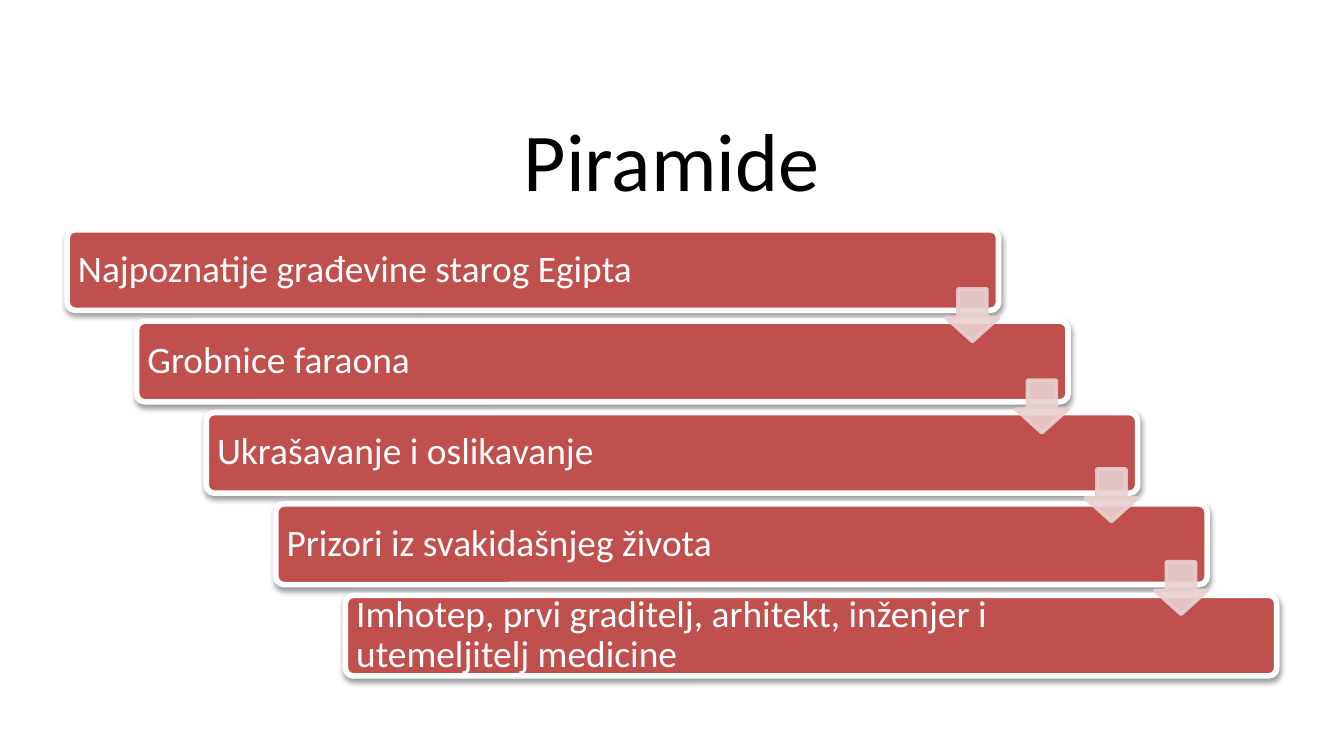
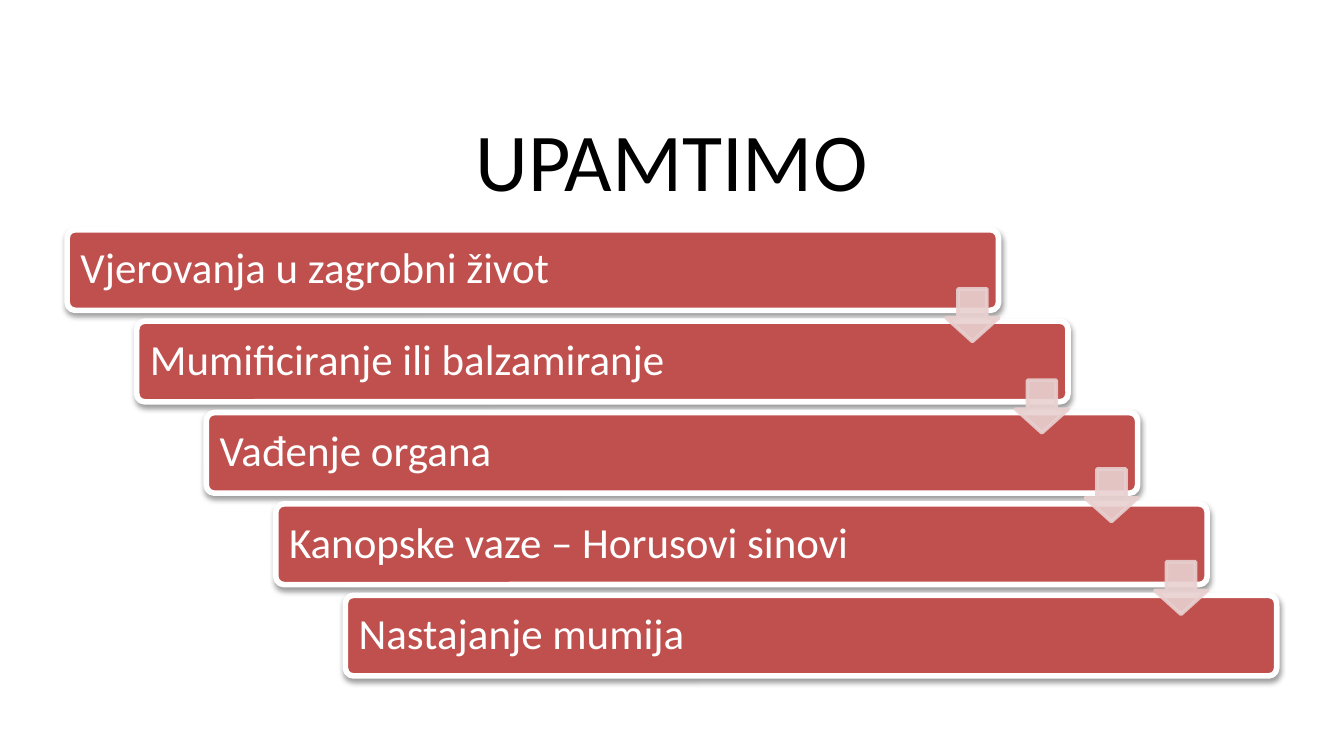
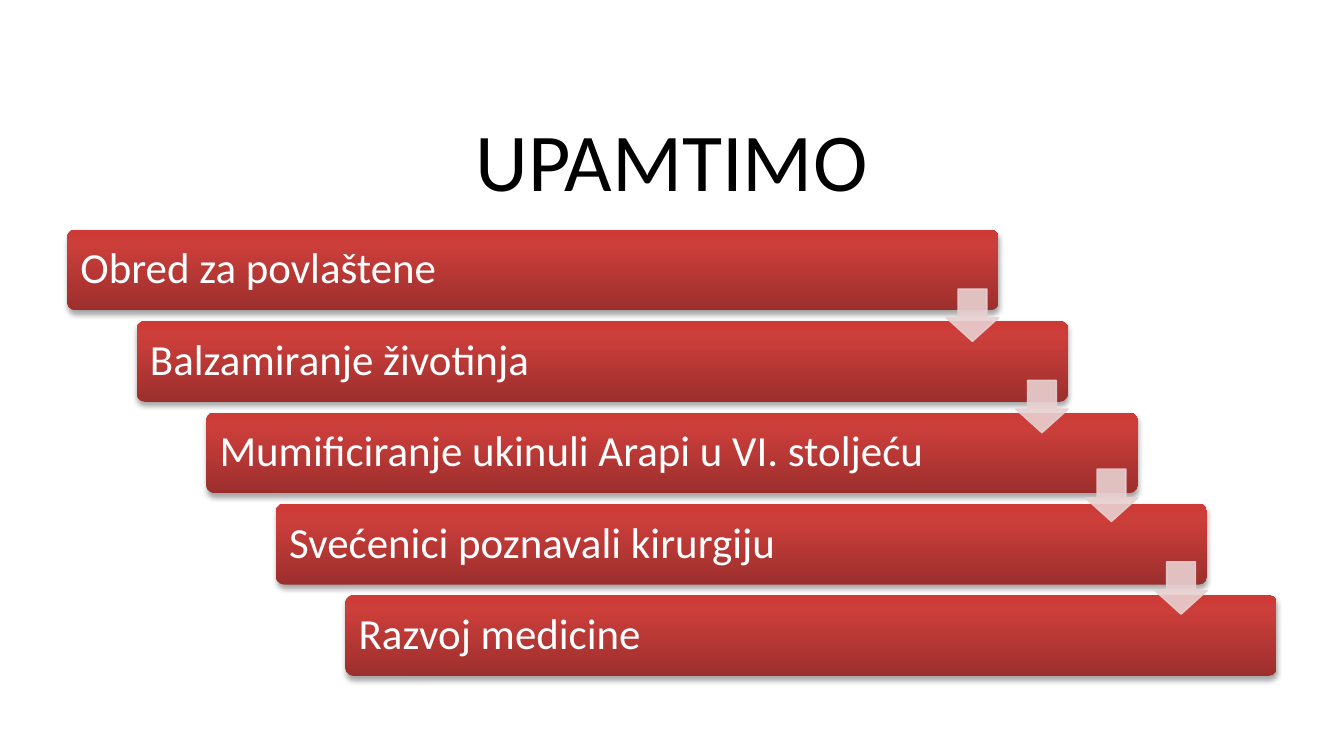
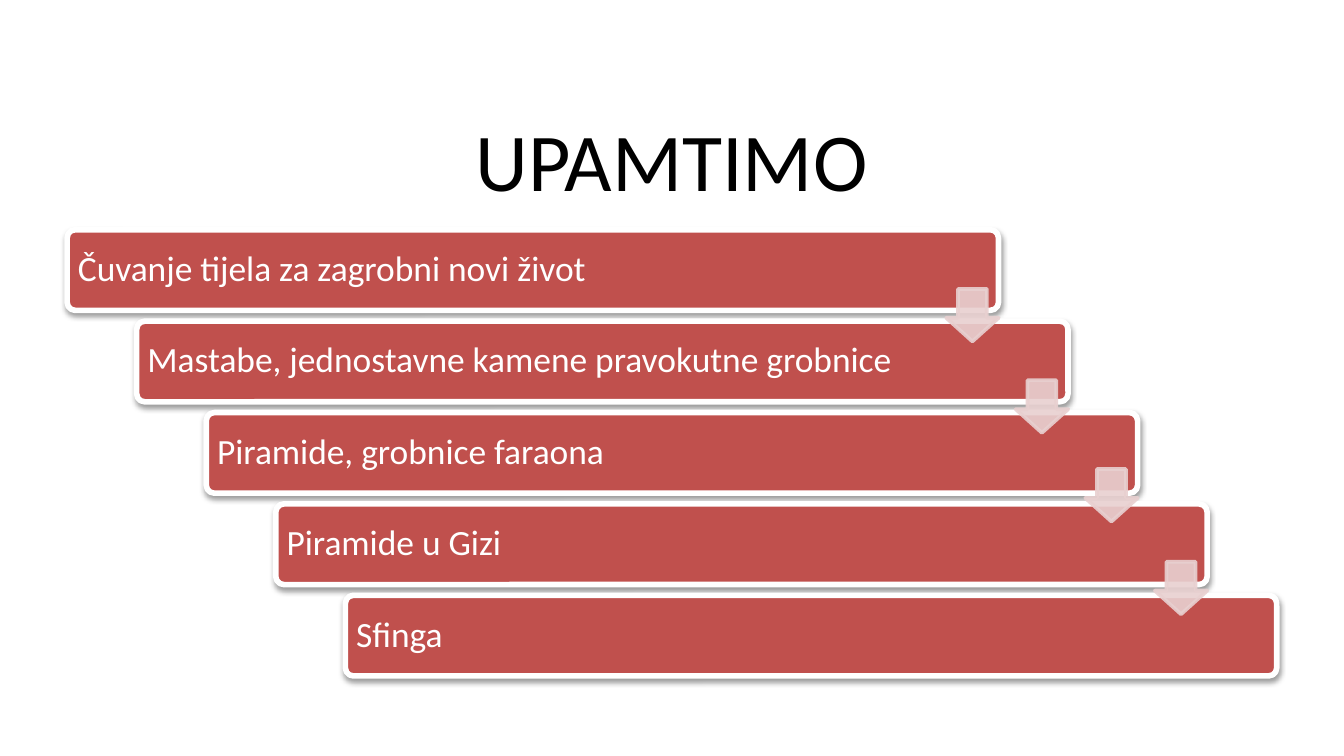
import copy

from lxml import etree
from pptx import Presentation
from pptx import util as u
from pptx.dml.color import RGBColor
from pptx.enum import shapes, text
from pptx.oxml import ns

COLORS = {
    "title": "000000",
    "bar": "C0504D",
    "bar_text": "FFFFFF",
    "bar_line": "FFFFFF",
    "arrow": "E8D0D0",
    "shadow": "000000",
}
GRADIENT = [(0, "9C2F2D"), (0.8, "CB3E3A"), (1, "CE3B37")]
FONT = "Calibri"

SLIDE_WIDTH = 10
SLIDE_HEIGHT = SLIDE_WIDTH * 9 / 16
BAR_WIDTH, BAR_HEIGHT = 6.93, 0.6
FIRST_BAR, LAST_BAR = (0.5, 1.71), (2.57, 4.43)
FIRST_TEXT_WIDTH, TEXT_WIDTH = 6.25, 6.02
ARROW_SIZE = 0.39
ARROW_TOPS = (2.15, 2.83, 3.49, 4.18)

FLAT = {"gradient": False, "arrow_line": 2, "shadow_alpha": 38, "shadow_distance": 1.6}
GLOSSY = {"gradient": True, "arrow_line": 0.75, "shadow_alpha": 35, "shadow_distance": 1.8}

SLIDES = [
    ("Piramide", FLAT, 20, 0.08, [
        "Najpoznatije građevine starog Egipta",
        "Grobnice faraona",
        "Ukrašavanje i oslikavanje",
        "Prizori iz svakidašnjeg života",
        "Imhotep, prvi graditelj, arhitekt, inženjer i utemeljitelj medicine",
    ]),
    ("UPAMTIMO", FLAT, 23, 0.1, [
        "Vjerovanja u zagrobni život",
        "Mumificiranje ili balzamiranje",
        "Vađenje organa",
        "Kanopske vaze – Horusovi sinovi",
        "Nastajanje mumija",
    ]),
    ("UPAMTIMO", GLOSSY, 23, 0.1, [
        "Obred za povlaštene",
        "Balzamiranje životinja",
        "Mumificiranje ukinuli Arapi u VI. stoljeću",
        "Svećenici poznavali kirurgiju",
        "Razvoj medicine",
    ]),
    ("UPAMTIMO", FLAT, 19, 0.08, [
        "Čuvanje tijela za zagrobni novi život",
        "Mastabe, jednostavne kamene pravokutne grobnice",
        "Piramide, grobnice faraona",
        "Piramide u Gizi",
        "Sfinga",
    ]),
]


def color(name):
    return RGBColor.from_string(COLORS[name])


def spread(first, last, count):
    return [
        tuple(start + (end - start) * index / (count - 1) for start, end in zip(first, last))
        for index in range(count)
    ]


def add_text(parent, box, words, size, color_name, inset=None, align=None):
    shape = parent.add_textbox(*map(u.Inches, box))
    frame = shape.text_frame
    frame.text = words
    frame.word_wrap = True
    frame.vertical_anchor = text.MSO_ANCHOR.MIDDLE
    if inset is not None:
        for side in ("left", "top", "right", "bottom"):
            setattr(frame, "margin_" + side, u.Inches(inset))
    paragraph = frame.paragraphs[0]
    paragraph.alignment = align
    paragraph.line_spacing = 0.9
    font = paragraph.runs[0].font
    font.name = FONT
    font.size = u.Pt(size)
    font.color.rgb = color(color_name)
    return shape


def set_percent_space_after(shape, percent):
    shape.text_frame.paragraphs[0].space_after = u.Pt(0)
    spacing = next(shape.element.iter(ns.qn("a:spcAft")))
    spacing.clear()
    etree.SubElement(spacing, ns.qn("a:spcPct"), val=str(percent * 1000))


def add_shadow(shape, alpha, distance):
    effects = shape.element.spPr.find(ns.qn("a:effectLst"))
    shadow = etree.SubElement(
        effects, ns.qn("a:outerShdw"), blurRad=str(u.Pt(3.1)), dist=str(u.Pt(distance)),
        dir="5400000", rotWithShape="0")
    tone = etree.SubElement(shadow, ns.qn("a:srgbClr"), val=COLORS["shadow"])
    etree.SubElement(tone, ns.qn("a:alpha"), val=str(alpha * 1000))


def fill_gradient(shape):
    shape.fill.gradient()
    shape.fill.gradient_angle = 90
    stops = next(shape.element.iter(ns.qn("a:gsLst")))
    stops.append(copy.deepcopy(stops[0]))
    for stop, (position, tone) in zip(shape.fill.gradient_stops, GRADIENT):
        stop.position = position
        stop.color.rgb = RGBColor.from_string(tone)


def add_bar(parent, left, top, style):
    shape = parent.add_shape(
        shapes.MSO_SHAPE.ROUNDED_RECTANGLE,
        *map(u.Inches, (left, top, BAR_WIDTH, BAR_HEIGHT)))
    shape.adjustments[0] = 0.1
    shape.shadow.inherit = False
    if style["gradient"]:
        fill_gradient(shape)
        shape.line.fill.background()
    else:
        shape.fill.solid()
        shape.fill.fore_color.rgb = color("bar")
        shape.line.color.rgb = color("bar_line")
        shape.line.width = u.Pt(3)
    add_shadow(shape, style["shadow_alpha"], style["shadow_distance"])


def add_arrow(parent, left, top, line_width):
    shape = parent.add_shape(
        shapes.MSO_SHAPE.DOWN_ARROW,
        *map(u.Inches, (left, top, ARROW_SIZE, ARROW_SIZE)))
    shape.adjustments[0] = 0.55
    shape.adjustments[1] = 0.45
    shape.shadow.inherit = False
    shape.fill.solid()
    shape.fill.fore_color.rgb = color("arrow")
    shape.line.color.rgb = color("arrow")
    shape.line.width = u.Pt(line_width)
    for tone in shape.element.spPr.iter(ns.qn("a:srgbClr")):
        etree.SubElement(tone, ns.qn("a:alpha"), val="90000")


def add_staircase(slide, steps, style, size, inset):
    group = slide.shapes.add_group_shape().shapes
    corners = spread(FIRST_BAR, LAST_BAR, len(steps))
    for index, (left, top) in enumerate(corners):
        add_bar(group, left, top, style)
        width = TEXT_WIDTH if index else FIRST_TEXT_WIDTH
        label = add_text(
            group, (left, top, width, BAR_HEIGHT), steps[index], size, "bar_text", inset)
        set_percent_space_after(label, 35)
    for (left, _), top in zip(corners, ARROW_TOPS):
        add_arrow(group, left + BAR_WIDTH - ARROW_SIZE, top, style["arrow_line"])


def main():
    presentation = Presentation()
    presentation.slide_width = u.Inches(SLIDE_WIDTH)
    presentation.slide_height = u.Inches(SLIDE_HEIGHT)
    for title, style, size, inset, steps in SLIDES:
        slide = presentation.slides.add_slide(presentation.slide_layouts[6])
        add_text(slide.shapes, (0.5, 0.84, 9, 0.78), title, 44, "title",
                 align=text.PP_ALIGN.CENTER)
        add_staircase(slide, steps, style, size, inset)
    presentation.save("out.pptx")


if __name__ == "__main__":
    main()
